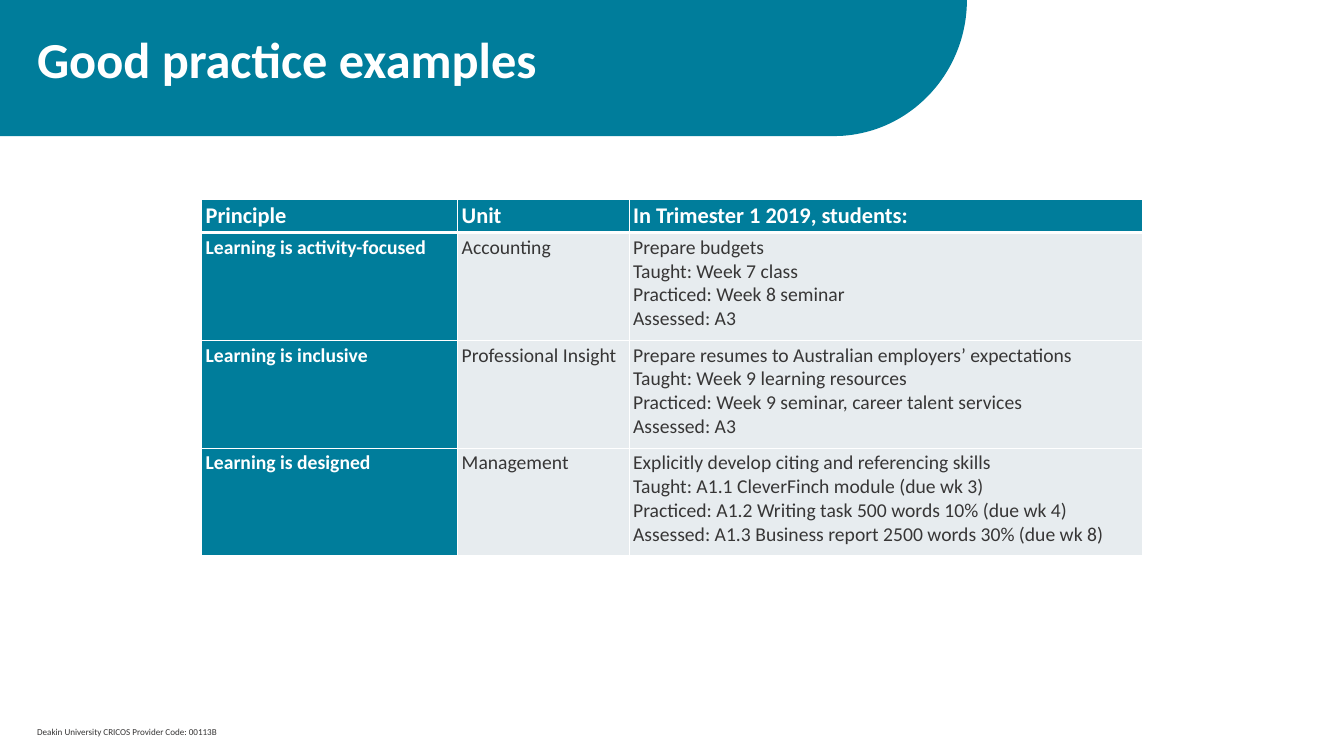
from dataclasses import dataclass

from lxml import etree
from pptx import Presentation
from pptx.dml.color import RGBColor
from pptx.enum.text import MSO_ANCHOR
from pptx.oxml.ns import qn
from pptx.util import Pt

PX = 9144
TOP, MIDDLE = MSO_ANCHOR.TOP, MSO_ANCHOR.MIDDLE


@dataclass(frozen=True)
class Theme:
    """Colours, font and type sizes of the slide."""
    font: str = "Calibri"
    teal: str = "007D9B"
    pale: str = "E7ECEF"
    ink: str = "373636"
    white: str = "FFFFFF"
    title: float = 36
    head: float = 16
    body: float = 14
    foot: float = 6.5


THEME = Theme()
COLS = (254, 170, 509)
ROWS = (32, 107, 107, 107)
CELLS = (
    ("Principle", "Unit", "In Trimester 1 2019, students:"),
    ("Learning is activity-focused", "Accounting",
     "Prepare budgets\nTaught: Week 7 class\n"
     "Practiced: Week 8 seminar\nAssessed: A3"),
    ("Learning is inclusive", "Professional Insight",
     "Prepare resumes to Australian employers’ expectations\n"
     "Taught: Week 9 learning resources\n"
     "Practiced: Week 9 seminar, career talent services\nAssessed: A3"),
    ("Learning is designed", "Management",
     "Explicitly develop citing and referencing skills\n"
     "Taught: A1.1 CleverFinch module (due wk 3)\n"
     "Practiced: A1.2 Writing task 500 words 10% (due wk 4)\n"
     "Assessed: A1.3 Business report 2500 words 30% (due wk 8)"),
)


def emu(*sizes):
    """Turn px lengths into EMU."""
    return [round(size * PX) for size in sizes]


def rgb(code):
    """Return the colour for a hex code."""
    return RGBColor.from_string(code)


def style(frame, size, color, bold=False):
    """Format every run in a text frame."""
    for para in frame.paragraphs:
        for run in para.runs:
            font = run.font
            font.name, font.size, font.bold = THEME.font, Pt(size), bold
            font.color.rgb = rgb(color)


def add_text(slide, box, text, size, color, bold=False, anchor=TOP):
    """Place a wrapped text box and return its frame."""
    frame = slide.shapes.add_textbox(*emu(*box)).text_frame
    frame.word_wrap = True
    frame.vertical_anchor = anchor
    frame.text = text
    style(frame, size, color, bold)
    return frame


def curve(start, pull, push, end, steps=48):
    """Return points along a cubic curve after its start."""
    points = []
    for step in range(1, steps + 1):
        t = step / steps
        u = 1 - t
        points.append(emu(*(
            u**3 * a + 3 * u * u * t * b + 3 * u * t * t * c + t**3 * d
            for a, b, c, d in zip(start, pull, push, end))))
    return points


def add_banner(slide, box):
    """Draw the band with a round corner and its title."""
    left, top, width, height = box
    right, base = left + width, top + height
    bend = curve((right, top), (right, top + 74),
                 (right - 59, base), (right - 132, base))
    path = slide.shapes.build_freeform(*emu(left, top))
    path.add_line_segments([emu(right, top), *bend, emu(left, base)])
    band = path.convert_to_shape()
    band.shadow.inherit = False
    band.fill.solid()
    band.fill.fore_color.rgb = rgb(THEME.teal)
    band.line.fill.background()
    frame = add_text(slide, (left + 27, top + 30, 933, height - 30),
                     "Good practice examples", THEME.title, THEME.white, True)
    frame.paragraphs[0].line_spacing = 0.9


def add_edge(cell, side, width):
    """Give one side of a cell a white border."""
    props = cell._tc.get_or_add_tcPr()
    line = etree.SubElement(props, qn(f"a:ln{side}"), w=str(Pt(width)))
    fill = etree.SubElement(line, qn("a:solidFill"))
    etree.SubElement(fill, qn("a:srgbClr"), val=THEME.white)


def fill_cell(cell, text, head, lead):
    """Write and format one cell."""
    cell.margin_left = cell.margin_right = 4 * PX
    cell.margin_top = cell.margin_bottom = 3 * PX
    for side in "LRTB":
        add_edge(cell, side, 3 if head and side == "B" else 1)
    dark = head or lead
    cell.fill.solid()
    cell.fill.fore_color.rgb = rgb(THEME.teal if dark else THEME.pale)
    cell.text_frame.text = text
    style(cell.text_frame, THEME.head if head else THEME.body,
          THEME.white if dark else THEME.ink, dark)


def add_grid(slide, box):
    """Place the table of principles."""
    grid = slide.shapes.add_table(len(ROWS), len(COLS), *emu(*box)).table
    grid.horz_banding = False
    for col, width in zip(grid.columns, COLS):
        col.width = width * PX
    for row, height in zip(grid.rows, ROWS):
        row.height = height * PX
    for r, texts in enumerate(CELLS):
        for c, text in enumerate(texts):
            fill_cell(grid.cell(r, c), text, r == 0, c == 0)


def add_foot(slide, box):
    """Place the provider line."""
    add_text(slide, box, "Deakin University CRICOS Provider Code: 00113B",
             THEME.foot, THEME.ink, anchor=MIDDLE)


def main():
    """Build and save the slide."""
    deck = Presentation()
    deck.slide_width, deck.slide_height = emu(1333, 750)
    slide = deck.slides.add_slide(deck.slide_layouts[6])
    add_banner(slide, (0, 0, 959, 135))
    add_grid(slide, (200, 198, sum(COLS), sum(ROWS)))
    add_foot(slide, (27, 715, 724, 22))
    deck.save("out.pptx")


if __name__ == "__main__":
    main()
